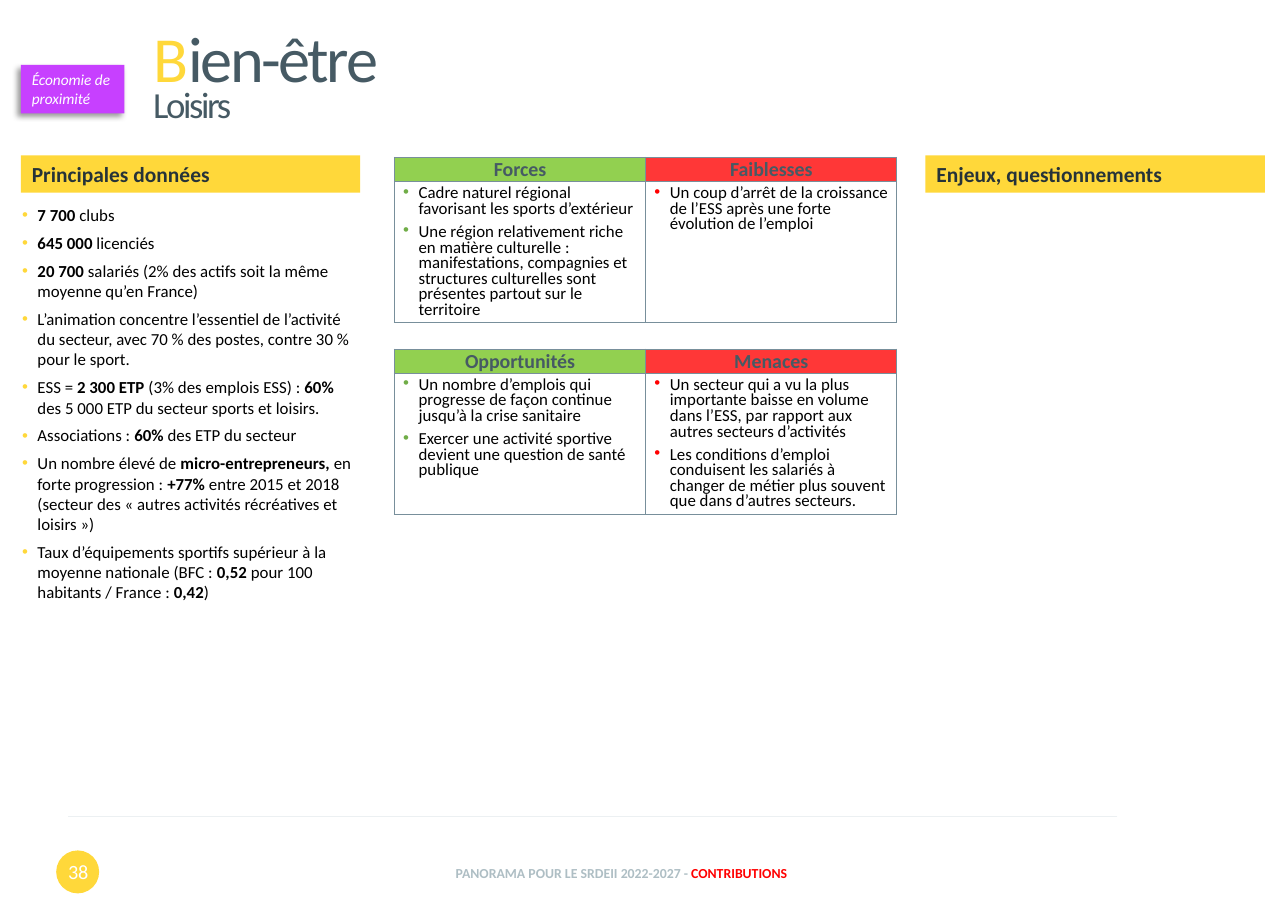
from lxml import etree
from pptx import Presentation
from pptx.dml.color import RGBColor
from pptx.enum import shapes, text
from pptx.oxml import ns
from pptx.util import Inches, Pt

# Content: ** surrounds bold words
COLORS = {
    "yellow": "FFD83A", "slate": "465A64", "dark": "263338", "black": "000000",
    "white": "FFFFFF", "purple": "C740FF", "green": "92D050", "red": "FF3737",
    "green_bullet": "70AD47", "bright_red": "FF0000", "border": "788F9B",
    "footer": "AEBEC4", "rule": "ECF0F2",
}
FONT = "Calibri"
TITLE = [[("B", "yellow"), ("ien-être", "slate")], [("Loisirs", "slate")]]
TITLE_SIZES = [42, 24]
BADGE = "Économie de proximité"
HEADINGS = [("Principales données", 0.19), ("Enjeux, questionnements", 8.4)]
KEY_DATA = [
    "**7 700 **clubs",
    "**645 000 **licenciés",
    "**20 700** salariés (2% des actifs soit la même moyenne qu’en France)",
    "L’animation concentre l’essentiel de l’activité du secteur, avec 70 % des postes, "
    "contre 30 % pour le sport.",
    "ESS = **2 300 ETP **(3% des emplois ESS) : **60%** des 5 000 ETP du secteur "
    "sports et loisirs.",
    "Associations : **60% **des ETP du secteur",
    "Un nombre élevé de **micro-entrepreneurs, **en forte progression : **+77% **entre "
    "2015 et 2018 (secteur des « autres activités récréatives et loisirs »)",
    "Taux d’équipements sportifs supérieur à la moyenne nationale (BFC : **0,52 **pour "
    "100 habitants / France : **0,42**)",
]
SWOT_TABLES = [
    [
        ("Forces", [
            "Cadre naturel régional favorisant les sports d’extérieur",
            "Une région relativement riche en matière culturelle : manifestations, "
            "compagnies et structures culturelles sont présentes partout sur le territoire",
        ]),
        ("Faiblesses", [
            "Un coup d’arrêt de la croissance de l’ESS après une forte évolution de l’emploi",
        ]),
    ],
    [
        ("Opportunités", [
            "Un nombre d’emplois qui progresse de façon continue jusqu’à la crise sanitaire",
            "Exercer une activité sportive devient une question de santé publique",
        ]),
        ("Menaces", [
            "Un secteur qui a vu la plus importante baisse en volume dans l’ESS, par rapport "
            "aux autres secteurs d’activités",
            "Les conditions d’emploi conduisent les salariés à changer de métier plus souvent "
            "que dans d’autres secteurs.",
        ]),
    ],
]
COLUMN_STYLES = [("green", "green_bullet"), ("red", "bright_red")]
FOOTER = [("PANORAMA POUR LE SRDEII 2022-2027 - ", "footer"), ("CONTRIBUTIONS", "bright_red")]
PAGE_NUMBER = "38"


# Helpers
def rgb(name):
    return RGBColor.from_string(COLORS[name])


def add_xml(parent, tag, **attributes):
    return etree.SubElement(parent, ns.qn(tag), attributes)


def add_run(paragraph, words, size, color, bold=False, italic=False):
    run = paragraph.add_run()
    run.text = words
    font = run.font
    font.name, font.size, font.bold, font.italic = FONT, Pt(size), bold, italic
    font.color.rgb = rgb(color)
    return run


def set_box(shape, left, top, width, height):
    shape.left, shape.top = Inches(left), Inches(top)
    shape.width, shape.height = Inches(width), Inches(height)


def set_margins(target, side, vertical):
    target.margin_left = target.margin_right = Inches(side)
    target.margin_top = target.margin_bottom = Inches(vertical)


def fill_bullets(frame, items, bullet_color, line_spacing=1.0):
    for index, item in enumerate(items):
        paragraph = frame.add_paragraph() if index else frame.paragraphs[0]
        properties = paragraph._p.get_or_add_pPr()
        properties.set("marL", str(Inches(0.15)))
        properties.set("indent", str(Inches(-0.14)))
        add_xml(add_xml(properties, "a:buClr"), "a:srgbClr", val=COLORS[bullet_color])
        add_xml(properties, "a:buFont", typeface="Arial")
        add_xml(properties, "a:buChar", char="•")
        paragraph.alignment = text.PP_ALIGN.LEFT
        paragraph.line_spacing = line_spacing
        paragraph.space_before = Pt(2 if index else 0)
        paragraph.space_after = Pt(3)
        for position, words in enumerate(item.split("**")):
            if words:
                add_run(paragraph, words, 11, "black", bold=position % 2 == 1)


def add_block(slide, kind, box, color):
    shape = slide.shapes.add_shape(kind, *map(Inches, box))
    shape.shadow.inherit = False
    shape.fill.solid()
    shape.fill.fore_color.rgb = rgb(color)
    shape.line.fill.background()
    shape.text_frame.word_wrap = True
    shape.text_frame.vertical_anchor = text.MSO_ANCHOR.TOP
    shape.text_frame.paragraphs[0].alignment = text.PP_ALIGN.LEFT
    return shape


def add_label(slide, box, runs, size, bold=False):
    frame = slide.shapes.add_textbox(*map(Inches, box)).text_frame
    frame.word_wrap = True
    frame.vertical_anchor = text.MSO_ANCHOR.MIDDLE
    frame.paragraphs[0].alignment = text.PP_ALIGN.CENTER
    for words, color in runs:
        add_run(frame.paragraphs[0], words, size, color, bold)


def format_cell(cell, fill, vertical_margin):
    set_margins(cell, 0.07, vertical_margin)
    properties = cell._tc.get_or_add_tcPr()
    for side in ("a:lnL", "a:lnR", "a:lnT", "a:lnB"):
        border = add_xml(properties, side, w=str(Pt(1)))
        add_xml(add_xml(border, "a:solidFill"), "a:srgbClr", val=COLORS["border"])
    cell.fill.solid()
    cell.fill.fore_color.rgb = rgb(fill)


def add_swot_table(slide, top, columns):
    table = slide.shapes.add_table(
        2, 2, Inches(3.58), Inches(top), Inches(4.56), Inches(1.47)).table
    table.first_row = table.horz_banding = False
    table.rows[0].height, table.rows[1].height = Inches(0.22), Inches(1.25)
    for index, (heading, items) in enumerate(columns):
        fill, bullet_color = COLUMN_STYLES[index]
        header, body = table.cell(0, index), table.cell(1, index)
        format_cell(header, fill, 0)
        paragraph = header.text_frame.paragraphs[0]
        paragraph.alignment = text.PP_ALIGN.CENTER
        add_run(paragraph, heading, 13, "slate", bold=True)
        format_cell(body, "white", 0.04)
        fill_bullets(body.text_frame, items, bullet_color, 0.75)


def main():
    presentation = Presentation()
    presentation.slide_width, presentation.slide_height = Inches(11.69), Inches(8.27)
    slide = presentation.slides.add_slide(presentation.slide_layouts[1])
    title, body = slide.placeholders

    # Title
    set_box(title, 1.29, 0.06, 9.94, 1.12)
    frame = title.text_frame
    frame.auto_size = text.MSO_AUTO_SIZE.NONE
    frame.vertical_anchor = text.MSO_ANCHOR.BOTTOM
    for index, (runs, size) in enumerate(zip(TITLE, TITLE_SIZES)):
        paragraph = frame.add_paragraph() if index else frame.paragraphs[0]
        paragraph.alignment = text.PP_ALIGN.LEFT
        paragraph.line_spacing = 0.7
        for words, color in runs:
            run = add_run(paragraph, words, size, color)
            run._r.get_or_add_rPr().set("spc", "-160")

    # Key data list
    set_box(body, 0.19, 1.81, 3.08, 5.27)
    body.text_frame.auto_size = text.MSO_AUTO_SIZE.NONE
    set_margins(body.text_frame, 0, 0.05)
    fill_bullets(body.text_frame, KEY_DATA, "yellow")

    # Column headings
    for heading, left in HEADINGS:
        bar = add_block(slide, shapes.MSO_SHAPE.RECTANGLE, (left, 1.41, 3.08, 0.34), "yellow")
        add_run(bar.text_frame.paragraphs[0], heading, 14, "dark", bold=True)

    # Strengths and weaknesses, opportunities and threats
    for index, columns in enumerate(SWOT_TABLES):
        add_swot_table(slide, 1.43 + index * 1.74, columns)

    # Badge with its shadow
    badge = add_block(slide, shapes.MSO_SHAPE.RECTANGLE, (0.19, 0.59, 0.94, 0.44), "purple")
    add_run(badge.text_frame.paragraphs[0], BADGE, 10, "white", italic=True)
    effects = badge._element.spPr.find(ns.qn("a:effectLst"))
    shadow = add_xml(effects, "a:outerShdw", blurRad=str(Pt(4)), dist=str(Pt(3)),
                     dir=str(135 * 60000), algn="tr", rotWithShape="0")
    shadow_color = add_xml(shadow, "a:srgbClr", val=COLORS["black"])
    add_xml(shadow_color, "a:alpha", val="40000")

    # Footer
    rule = slide.shapes.add_connector(
        shapes.MSO_CONNECTOR.STRAIGHT, *map(Inches, (10.14, 7.41, 0.62, 7.41)))
    rule.line.color.rgb = rgb("rule")
    rule.line.width = Pt(0.5)
    add_xml(rule._element.spPr, "a:effectLst")
    add_block(slide, shapes.MSO_SHAPE.OVAL, (0.51, 7.72, 0.39, 0.39), "yellow")
    add_label(slide, (0.45, 7.69, 0.52, 0.44), [(PAGE_NUMBER, "white")], 13.2)
    add_label(slide, (1.12, 7.71, 9.04, 0.44), FOOTER, 9, bold=True)

    presentation.save("out.pptx")


if __name__ == "__main__":
    main()
